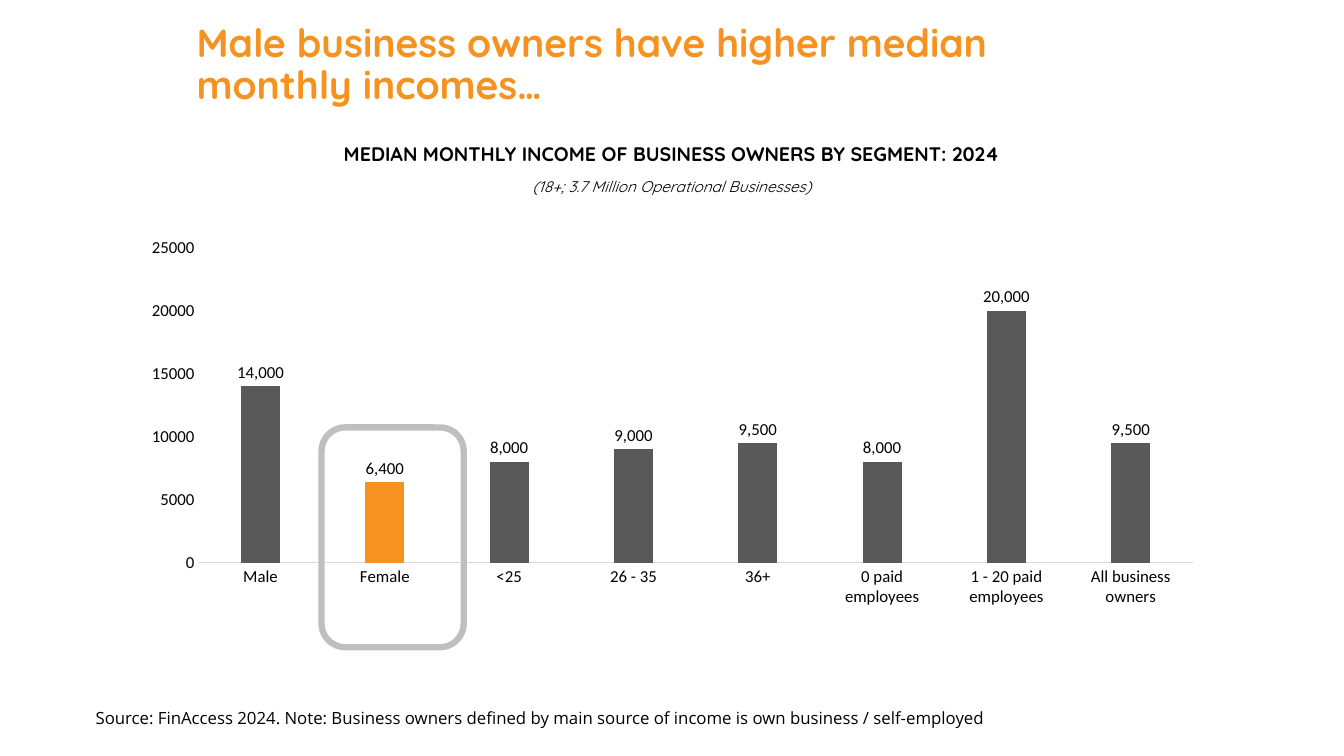
from lxml.etree import SubElement
from pptx import Presentation
from pptx.chart.data import CategoryChartData
from pptx.dml.color import RGBColor
from pptx.enum.chart import XL_CHART_TYPE, XL_LABEL_POSITION, XL_TICK_MARK
from pptx.enum.shapes import MSO_SHAPE
from pptx.enum.text import MSO_ANCHOR, MSO_AUTO_SIZE, PP_ALIGN
from pptx.oxml.ns import qn
from pptx.util import Pt

ORANGE = RGBColor(0xF6, 0x93, 0x20)
BLACK = RGBColor(0x00, 0x00, 0x00)
DARK_GREY = RGBColor(0x59, 0x59, 0x59)
MID_GREY = RGBColor(0xBF, 0xBF, 0xBF)
LIGHT_GREY = RGBColor(0xD9, 0xD9, 0xD9)

MEDIAN_INCOMES = {
    "Male": 14000,
    "Female": 6400,
    "<25": 8000,
    "26 - 35": 9000,
    "36+": 9500,
    "0 paid employees": 8000,
    "1 - 20 paid employees": 20000,
    "All business owners": 9500,
}
PLOT_AREA = {"x": 0.063, "y": 0.035, "w": 0.917, "h": 0.788}


def set_font(font, color=BLACK, **values):
    for name, value in values.items():
        setattr(font, name, value)
    font.color.rgb = color


def place(shape, left, top, width, height):
    sides = {"left": left, "top": top, "width": width, "height": height}
    for name, value in sides.items():
        setattr(shape, name, Pt(value))


def write_text(shape, text, anchor, align, line_spacing, color=BLACK, **font):
    frame = shape.text_frame
    settings = {"word_wrap": True, "auto_size": MSO_AUTO_SIZE.NONE,
                "vertical_anchor": anchor}
    for name, value in settings.items():
        setattr(frame, name, value)
    para = frame.paragraphs[0]
    para.alignment = align
    para.line_spacing = line_spacing
    span = para.add_run()
    span.text = text
    set_font(span.font, color, **font)


def add_title(page, text):
    title = page.shapes.title
    place(title, 133.2, 7.9, 672.5, 78.5)
    write_text(title, text, MSO_ANCHOR.MIDDLE, PP_ALIGN.LEFT, 0.9, ORANGE,
               name="Quicksand", size=Pt(28), bold=True)


def add_text(page, bounds, text, anchor=MSO_ANCHOR.TOP,
             align=PP_ALIGN.CENTER, line_spacing=1.0, **font):
    box = page.shapes.add_textbox(*map(Pt, bounds))
    write_text(box, text, anchor, align, line_spacing, **font)


def set_plot_area(chart):
    plot_area = chart._chartSpace.chart.plotArea
    layout = plot_area.find(qn("c:layout"))
    if layout is None:
        layout = plot_area.makeelement(qn("c:layout"))
        plot_area.insert(0, layout)
    manual = SubElement(layout, qn("c:manualLayout"))
    settings = {"layoutTarget": "inner", "xMode": "edge", "yMode": "edge",
                **PLOT_AREA}
    for name, value in settings.items():
        SubElement(manual, qn(f"c:{name}")).set("val", str(value))


def format_axes(chart):
    for axis in (chart.category_axis, chart.value_axis):
        axis.has_major_gridlines = False
        axis.major_tick_mark = XL_TICK_MARK.NONE
        axis.minor_tick_mark = XL_TICK_MARK.NONE
        set_font(axis.tick_labels.font, name="Calibri", size=Pt(12))
    baseline = chart.category_axis.format.line
    baseline.color.rgb = LIGHT_GREY
    baseline.width = Pt(0.75)

    scale = chart.value_axis
    limits = {"minimum_scale": 0, "maximum_scale": 25000, "major_unit": 5000}
    for name, value in limits.items():
        setattr(scale, name, value)
    scale.format.line.fill.background()
    scale.tick_labels.number_format = "0"
    scale.tick_labels.number_format_is_linked = False


def format_bars(plot, highlighted):
    settings = {"gap_width": 219, "overlap": -27, "vary_by_categories": False,
                "has_data_labels": True}
    for name, value in settings.items():
        setattr(plot, name, value)
    labels = plot.data_labels
    label_settings = {"show_value": True, "number_format": "#,##0",
                      "number_format_is_linked": False,
                      "position": XL_LABEL_POSITION.OUTSIDE_END}
    for name, value in label_settings.items():
        setattr(labels, name, value)
    set_font(labels.font, name="Calibri", size=Pt(12))

    series = plot.series[0]
    series.invert_if_negative = False
    bar = series.points[list(MEDIAN_INCOMES).index(highlighted)]
    for part, color in ((series, DARK_GREY), (bar, ORANGE)):
        part.format.fill.solid()
        part.format.fill.fore_color.rgb = color


def add_income_chart(page):
    data = CategoryChartData()
    data.categories = list(MEDIAN_INCOMES)
    data.add_series("Series 1", list(MEDIAN_INCOMES.values()))
    bounds = map(Pt, (92.9, 167, 774.7, 285.8))
    chart = page.shapes.add_chart(
        XL_CHART_TYPE.COLUMN_CLUSTERED, *bounds, data).chart
    chart.has_legend = False
    chart.has_title = False
    set_font(chart.font, name="Calibri", size=Pt(10))
    set_plot_area(chart)
    format_axes(chart)
    format_bars(chart.plots[0], "Female")


def add_highlight_frame(page):
    bounds = map(Pt, (229.7, 305.3, 101.5, 157))
    frame = page.shapes.add_shape(MSO_SHAPE.ROUNDED_RECTANGLE, *bounds)
    frame.shadow.inherit = False
    frame.fill.background()
    frame.line.color.rgb = MID_GREY
    frame.line.width = Pt(4.5)


def main():
    deck = Presentation()
    deck.slide_width = Pt(960)
    deck.slide_height = Pt(540)
    page = deck.slides.add_slide(deck.slide_layouts.get_by_name("Title Only"))

    add_title(page, "Male business owners have higher median monthly incomes…")
    add_text(page, (211, 100.8, 537.8, 21.6),
             "MEDIAN MONTHLY INCOME OF BUSINESS OWNERS BY SEGMENT: 2024",
             line_spacing=0.8, name="Quicksand", size=Pt(14), bold=True)
    add_text(page, (313.2, 124.6, 334, 21.6),
             "(18+; 3.7 Million Operational Businesses)",
             line_spacing=0.9, name="Quicksand", size=Pt(11), italic=True)
    add_income_chart(page)
    add_text(page, (61.2, 498.2, 861.8, 28.8),
             "Source: FinAccess 2024. Note: Business owners defined by main "
             "source of income is own business / self-employed",
             anchor=MSO_ANCHOR.MIDDLE, align=PP_ALIGN.LEFT,
             name="Open Sans", size=Pt(12))
    add_highlight_frame(page)

    deck.save("out.pptx")


if __name__ == "__main__":
    main()
